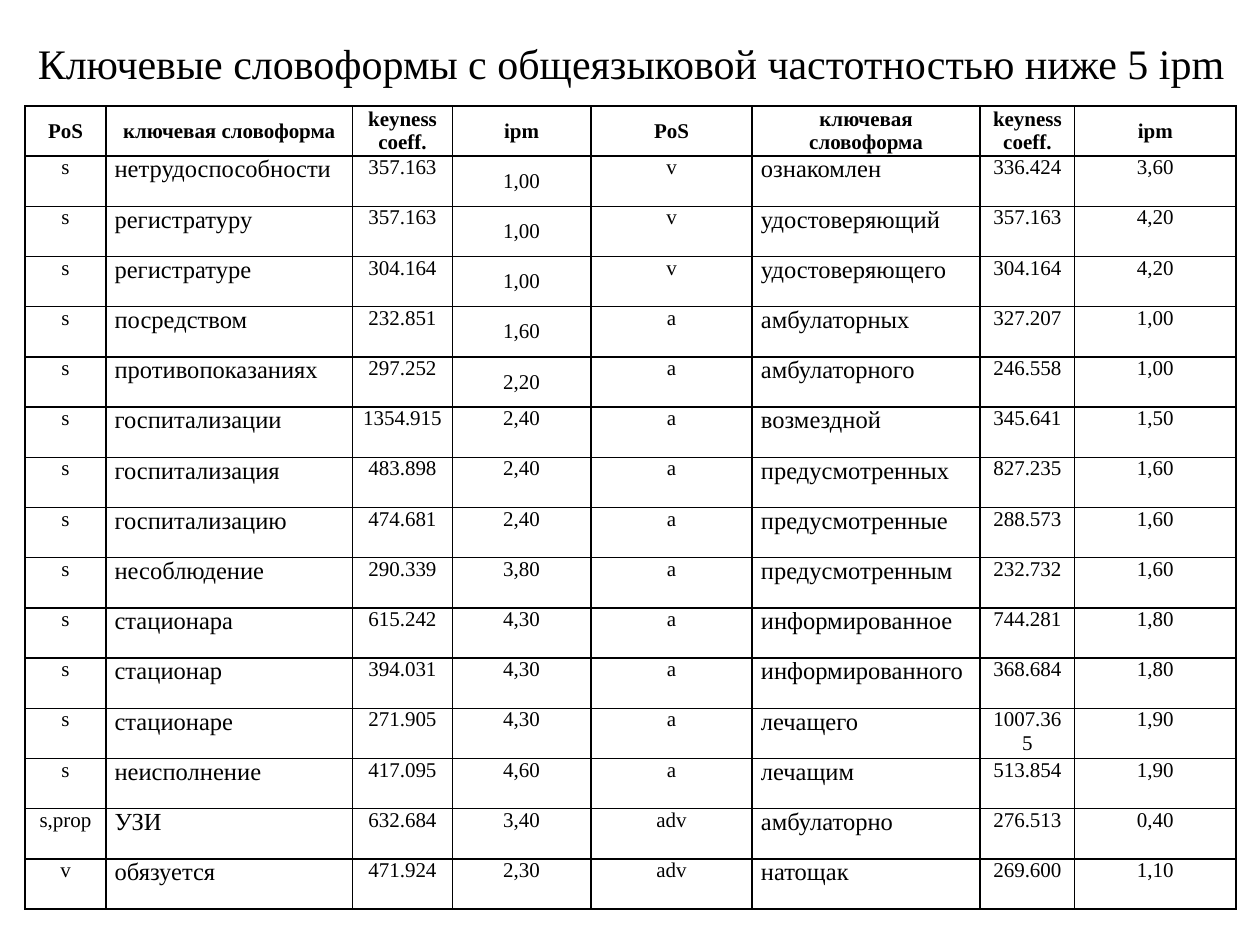
from dataclasses import dataclass

from lxml.etree import SubElement
from pptx import Presentation
from pptx.dml.color import RGBColor
from pptx.enum.text import MSO_ANCHOR as Anchor, PP_ALIGN as Align
from pptx.oxml.ns import qn
from pptx.util import Inches, Pt

FONT = "Times New Roman"
BLACK = RGBColor(0x00, 0x00, 0x00)
WHITE = RGBColor(0xFF, 0xFF, 0xFF)
BORDER = RGBColor(0x00, 0x00, 0x01)

SLIDE_WIDTH, SLIDE_HEIGHT = Inches(10), Inches(7.5)
TABLE_LEFT, TABLE_TOP, TABLE_HEIGHT = Inches(0.2), Inches(0.84), Inches(6.38)
CELL_MARGIN = Inches(0.07)
MIDDLE_IPM_ROWS = range(1, 6)  # first ipm column is centred vertically here
FIRST_IPM_COLUMN = 3


@dataclass(frozen=True)
class Column:
    heading: str
    share: float  # of the slide width
    size: int = 12
    align: Align = Align.CENTER


@dataclass(frozen=True)
class WordForm:
    pos: str
    word: str
    keyness: str
    ipm: str

    def values(self) -> list[str]:
        return [self.pos, self.word, self.keyness, self.ipm]


COLUMNS = [
    Column("PoS", 0.064),
    Column("ключевая словоформа", 0.196, 14, Align.LEFT),
    Column("keyness coeff.", 0.079),
    Column("ipm", 0.11),
    Column("PoS", 0.128),
    Column("ключевая словоформа", 0.181, 14, Align.LEFT),
    Column("keyness coeff.", 0.075),
    Column("ipm", 0.128),
]

LEFT_FORMS = [
    WordForm("s", "нетрудоспособности", "357.163", "1,00"),
    WordForm("s", "регистратуру", "357.163", "1,00"),
    WordForm("s", "регистратуре", "304.164", "1,00"),
    WordForm("s", "посредством", "232.851", "1,60"),
    WordForm("s", "противопоказаниях", "297.252", "2,20"),
    WordForm("s", "госпитализации", "1354.915", "2,40"),
    WordForm("s", "госпитализация", "483.898", "2,40"),
    WordForm("s", "госпитализацию", "474.681", "2,40"),
    WordForm("s", "несоблюдение", "290.339", "3,80"),
    WordForm("s", "стационара", "615.242", "4,30"),
    WordForm("s", "стационар", "394.031", "4,30"),
    WordForm("s", "стационаре", "271.905", "4,30"),
    WordForm("s", "неисполнение", "417.095", "4,60"),
    WordForm("s,prop", "УЗИ", "632.684", "3,40"),
    WordForm("v", "обязуется", "471.924", "2,30"),
]

RIGHT_FORMS = [
    WordForm("v", "ознакомлен", "336.424", "3,60"),
    WordForm("v", "удостоверяющий", "357.163", "4,20"),
    WordForm("v", "удостоверяющего", "304.164", "4,20"),
    WordForm("a", "амбулаторных", "327.207", "1,00"),
    WordForm("a", "амбулаторного", "246.558", "1,00"),
    WordForm("a", "возмездной", "345.641", "1,50"),
    WordForm("a", "предусмотренных", "827.235", "1,60"),
    WordForm("a", "предусмотренные", "288.573", "1,60"),
    WordForm("a", "предусмотренным", "232.732", "1,60"),
    WordForm("a", "информированное", "744.281", "1,80"),
    WordForm("a", "информированного", "368.684", "1,80"),
    WordForm("a", "лечащего", "1007.365", "1,90"),
    WordForm("a", "лечащим", "513.854", "1,90"),
    WordForm("adv", "амбулаторно", "276.513", "0,40"),
    WordForm("adv", "натощак", "269.600", "1,10"),
]


def add_run(paragraph, text: str, size: int, bold: bool = False) -> None:
    run = paragraph.add_run()
    run.text = text
    run.font.name = FONT
    run.font.size = Pt(size)
    run.font.bold = bold
    run.font.color.rgb = BLACK


def add_borders(cell) -> None:
    properties = cell._tc.get_or_add_tcPr()
    for position, side in enumerate(("lnL", "lnR", "lnT", "lnB")):
        line = SubElement(properties, qn(f"a:{side}"), w=str(Pt(1)))
        fill = SubElement(line, qn("a:solidFill"))
        SubElement(fill, qn("a:srgbClr"), val=str(BORDER))
        properties.insert(position, line)  # borders come before the fill


def fill_cell(cell, text: str, column: Column, header: bool, anchor: Anchor) -> None:
    cell.fill.solid()
    cell.fill.fore_color.rgb = WHITE
    cell.margin_left = cell.margin_right = CELL_MARGIN
    cell.margin_top = cell.margin_bottom = 0
    cell.vertical_anchor = anchor
    paragraph = cell.text_frame.paragraphs[0]
    paragraph.alignment = Align.CENTER if header else column.align
    add_run(paragraph, text, 12 if header else column.size, bold=header)
    add_borders(cell)


def set_title(title) -> None:
    title.left, title.top = Inches(0.2), Inches(0.21)
    title.width, title.height = Inches(9.69), Inches(0.63)
    title.text_frame.vertical_anchor = Anchor.MIDDLE
    paragraph = title.text_frame.paragraphs[0]
    paragraph.alignment = Align.LEFT
    paragraph.line_spacing = 0.9
    add_run(paragraph, "Ключевые словоформы с общеязыковой частотностью ниже 5 ipm", 24)


def add_word_table(slide) -> None:
    rows = [[column.heading for column in COLUMNS]]
    rows += [left.values() + right.values() for left, right in zip(LEFT_FORMS, RIGHT_FORMS)]
    widths = [int(SLIDE_WIDTH * column.share) for column in COLUMNS]
    table = slide.shapes.add_table(
        len(rows), len(COLUMNS), TABLE_LEFT, TABLE_TOP, sum(widths), TABLE_HEIGHT
    ).table
    table.first_row = table.horz_banding = False
    for table_column, width in zip(table.columns, widths):
        table_column.width = width

    for row_index, values in enumerate(rows):
        header = row_index == 0
        for column_index, (text, column) in enumerate(zip(values, COLUMNS)):
            middle = header or (
                column_index == FIRST_IPM_COLUMN and row_index in MIDDLE_IPM_ROWS
            )
            anchor = Anchor.MIDDLE if middle else Anchor.TOP
            fill_cell(table.cell(row_index, column_index), text, column, header, anchor)


def main() -> None:
    presentation = Presentation()
    presentation.slide_width, presentation.slide_height = SLIDE_WIDTH, SLIDE_HEIGHT
    slide = presentation.slides.add_slide(presentation.slide_layouts[5])  # title only
    set_title(slide.shapes.title)
    add_word_table(slide)
    presentation.save("out.pptx")


if __name__ == "__main__":
    main()
